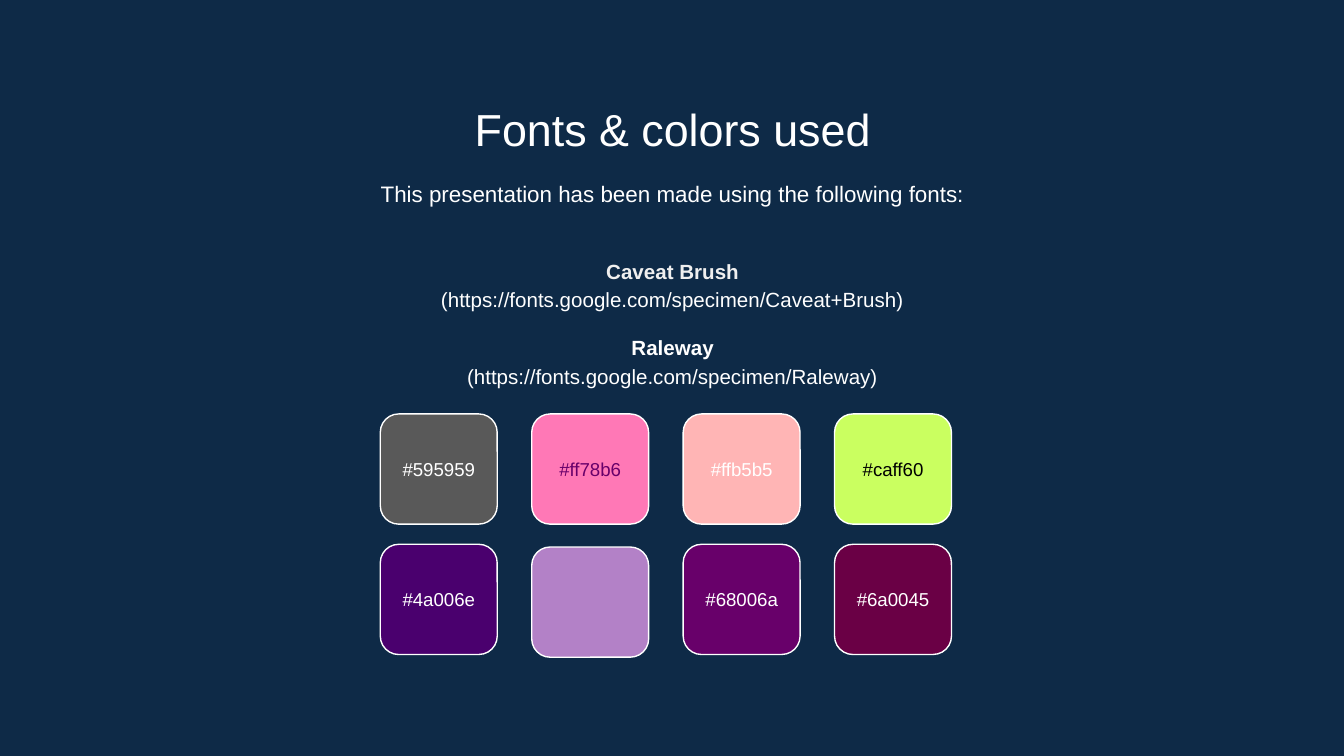
from pptx import Presentation
from pptx.dml.color import RGBColor
from pptx.enum.shapes import MSO_SHAPE as Shape
from pptx.enum.text import MSO_ANCHOR as Anchor, PP_ALIGN as Align
from pptx.util import Inches, Pt

NAVY = RGBColor(0x0E, 0x2A, 0x47)
WHITE = RGBColor(0xFF, 0xFF, 0xFF)
PALE = RGBColor(0xEF, 0xEF, 0xEF)
BLACK = RGBColor(0x00, 0x00, 0x00)
GREY = RGBColor(0x59, 0x59, 0x59)
PINK = RGBColor(0xFF, 0x78, 0xB6)
PEACH = RGBColor(0xFF, 0xB5, 0xB5)
LIME = RGBColor(0xCA, 0xFF, 0x60)
INDIGO = RGBColor(0x4A, 0x00, 0x6E)
LILAC = RGBColor(0xB3, 0x81, 0xC7)
PURPLE = RGBColor(0x68, 0x00, 0x6A)
WINE = RGBColor(0x6A, 0x00, 0x45)

TITLE = {"size": Pt(24), "color": WHITE}
INTRO = {"size": Pt(12), "color": WHITE}
LINK = {"size": Pt(11), "color": WHITE}
NAME = {**LINK, "bold": True}
LABEL = {"size": Pt(10)}
SPACED = {"line_spacing": 1.15}

TEXTS = [
    (0.66, 0.53, Anchor.TOP, [("Fonts & colors used", TITLE, {})]),
    (1.21, 0.48, Anchor.TOP, [
        ("This presentation has been made using the following fonts:", INTRO, SPACED),
    ]),
    (1.71, 1.37, Anchor.MIDDLE, [
        ("Caveat Brush", {**NAME, "color": PALE}, SPACED),
        ("(https://fonts.google.com/specimen/Caveat+Brush)", LINK, SPACED),
        ("Raleway", NAME, {**SPACED, "space_before": Pt(10.6)}),
        ("(https://fonts.google.com/specimen/Raleway)", LINK, SPACED),
    ]),
]

SWATCHES = [
    [(GREY, "#595959", WHITE, 0), (PINK, "#ff78b6", PURPLE, 0),
     (PEACH, "#ffb5b5", WHITE, 0), (LIME, "#caff60", BLACK, 0)],
    [(INDIGO, "#4a006e", WHITE, 0), (LILAC, "", WHITE, 0.02),
     (PURPLE, "#68006a", WHITE, 0), (WINE, "#6a0045", WHITE, 0)],
]
SLIDE_WIDTH = 10
SLIDE_HEIGHT = SLIDE_WIDTH * 9 / 16
TEXT_LEFT, TEXT_WIDTH = 1.15, 7.71
GRID_LEFT, LAST_LEFT = 2.83, 6.21
GRID_TOP, STEP_Y = 3.08, 0.97
STEP_X = (LAST_LEFT - GRID_LEFT) / (len(SWATCHES[0]) - 1)
SWATCH_WIDTH, SWATCH_HEIGHT = 0.87, 0.82


def write(shape, anchor, lines):
    frame = shape.text_frame
    frame.word_wrap = True
    frame.vertical_anchor = anchor
    for side in ("left", "top", "right", "bottom"):
        setattr(frame, f"margin_{side}", Inches(0.1))
    for index, (text, look, spacing) in enumerate(lines):
        para = frame.add_paragraph() if index else frame.paragraphs[0]
        para.alignment = Align.CENTER
        for key, value in spacing.items():
            setattr(para, key, value)
        span = para.add_run()
        span.text = text
        span.font.name = "Arial"
        for key, value in look.items():
            if key == "color":
                span.font.color.rgb = value
            else:
                setattr(span.font, key, value)


def add_swatch(slide, left, top, fill, label, ink):
    swatch = slide.shapes.add_shape(
        Shape.ROUNDED_RECTANGLE, Inches(left), Inches(top),
        Inches(SWATCH_WIDTH), Inches(SWATCH_HEIGHT))
    swatch.shadow.inherit = False
    swatch.fill.solid()
    swatch.fill.fore_color.rgb = fill
    swatch.line.color.rgb = WHITE
    swatch.line.width = Pt(0.75)
    if label:
        write(swatch, Anchor.MIDDLE, [(label, {**LABEL, "color": ink}, {})])


def main():
    deck = Presentation()
    deck.slide_width, deck.slide_height = Inches(SLIDE_WIDTH), Inches(SLIDE_HEIGHT)
    slide = deck.slides.add_slide(deck.slide_layouts[6])
    slide.background.fill.solid()
    slide.background.fill.fore_color.rgb = NAVY
    for top, height, anchor, lines in TEXTS:
        box = slide.shapes.add_textbox(
            Inches(TEXT_LEFT), Inches(top), Inches(TEXT_WIDTH), Inches(height))
        write(box, anchor, lines)
    for row, swatches in enumerate(SWATCHES):
        for column, (fill, label, ink, drop) in enumerate(swatches):
            left = GRID_LEFT + column * STEP_X
            top = GRID_TOP + row * STEP_Y + drop
            add_swatch(slide, left, top, fill, label, ink)
    deck.save("out.pptx")


if __name__ == "__main__":
    main()
